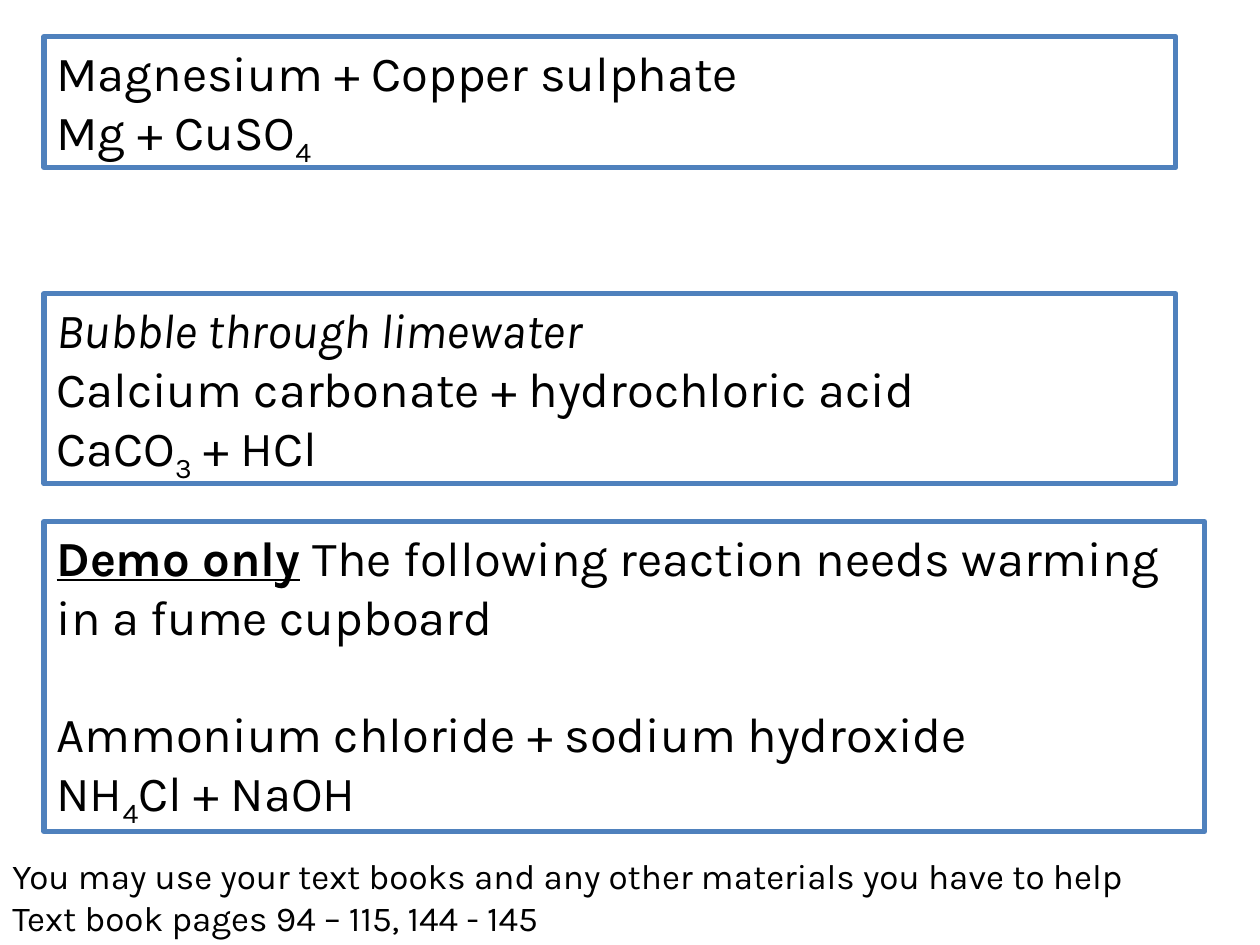
from pptx import Presentation
from pptx.dml.color import RGBColor
from pptx.enum.shapes import MSO_SHAPE
from pptx.enum.text import MSO_ANCHOR, MSO_AUTO_SIZE, PP_ALIGN
from pptx.util import Inches, Pt

RECTANGLE = MSO_SHAPE.RECTANGLE
TOP = MSO_ANCHOR.TOP
GROW = MSO_AUTO_SIZE.SHAPE_TO_FIT_TEXT
LEFT = PP_ALIGN.LEFT

BLACK = RGBColor(0x00, 0x00, 0x00)
BLUE = RGBColor(0x4F, 0x81, 0xBD)
FONT = "Karla"
BLANK_LAYOUT = 6
LINE_GAP = 33  # points, one line of reaction text

BOX_LEFT = 0.35
BOX_WIDTH = 8.98


def add_run(paragraph, text, size=28, bold=False, italic=False,
            underline=False, subscript=False):
    run = paragraph.add_run()
    run.text = text
    font = run.font
    font.name = FONT
    font.size = Pt(size)
    font.bold = bold
    font.italic = italic
    font.underline = underline
    font.color.rgb = BLACK
    if subscript:
        run._r.get_or_add_rPr().set("baseline", "-25000")


def write_paragraphs(shape, paragraphs, size=28, gaps=None):
    """Each paragraph is a list of (text, format) runs; gaps maps index to points."""
    frame = shape.text_frame
    frame.word_wrap = True
    frame.auto_size = GROW
    frame.vertical_anchor = TOP
    for index, runs in enumerate(paragraphs):
        paragraph = frame.add_paragraph() if index else frame.paragraphs[0]
        paragraph.alignment = LEFT
        paragraph.space_before = Pt((gaps or {}).get(index, 0))
        for text, run_format in runs:
            add_run(paragraph, text, size=size, **run_format)


def plain(text):
    return [(text, {})]


def formula(before, digit, after=""):
    runs = [(before, {}), (digit, {"subscript": True})]
    return runs + plain(after) if after else runs


def add_reaction_box(slide, top, height, paragraphs, width=BOX_WIDTH, gaps=None):
    box = slide.shapes.add_shape(RECTANGLE, Inches(BOX_LEFT), Inches(top),
                                 Inches(width), Inches(height))
    box.shadow.inherit = False
    box.fill.background()
    box.line.color.rgb = BLUE
    box.line.width = Pt(3)
    write_paragraphs(box, paragraphs, gaps=gaps)


def add_help_note(slide, left, top, width, height):
    note = slide.shapes.add_textbox(Inches(left), Inches(top),
                                    Inches(width), Inches(height))
    write_paragraphs(note, [
        plain("You may use your text books and any other materials you have to help"),
        plain("Text book pages 94 – 115, 144 - 145"),
    ], size=20)


def main():
    presentation = Presentation()
    presentation.slide_width = Inches(10)
    presentation.slide_height = Inches(7.5)
    slide = presentation.slides.add_slide(presentation.slide_layouts[BLANK_LAYOUT])

    # Displacement reaction
    add_reaction_box(slide, 0.29, 1.04, [
        plain("Magnesium + Copper sulphate"),
        formula("Mg + CuSO", "4"),
    ])

    # Carbonate and acid
    add_reaction_box(slide, 2.33, 1.51, [
        [("Bubble through limewater", {"italic": True})],
        plain("Calcium carbonate + hydrochloric acid"),
        formula("CaCO", "3", " + HCl"),
    ])

    # Demonstration, with a line of space above the reaction
    add_reaction_box(slide, 4.14, 2.46, [
        [("Demo only", {"bold": True, "underline": True}),
         (" ", {"bold": True}),
         ("The following reaction needs warming in a fume cupboard", {})],
        plain("Ammonium chloride + sodium hydroxide"),
        formula("NH", "4", "Cl + NaOH"),
    ], width=9.21, gaps={1: LINE_GAP})

    # Where to find help
    add_help_note(slide, 0, 6.73, 10, 0.77)

    presentation.save("out.pptx")


if __name__ == "__main__":
    main()
